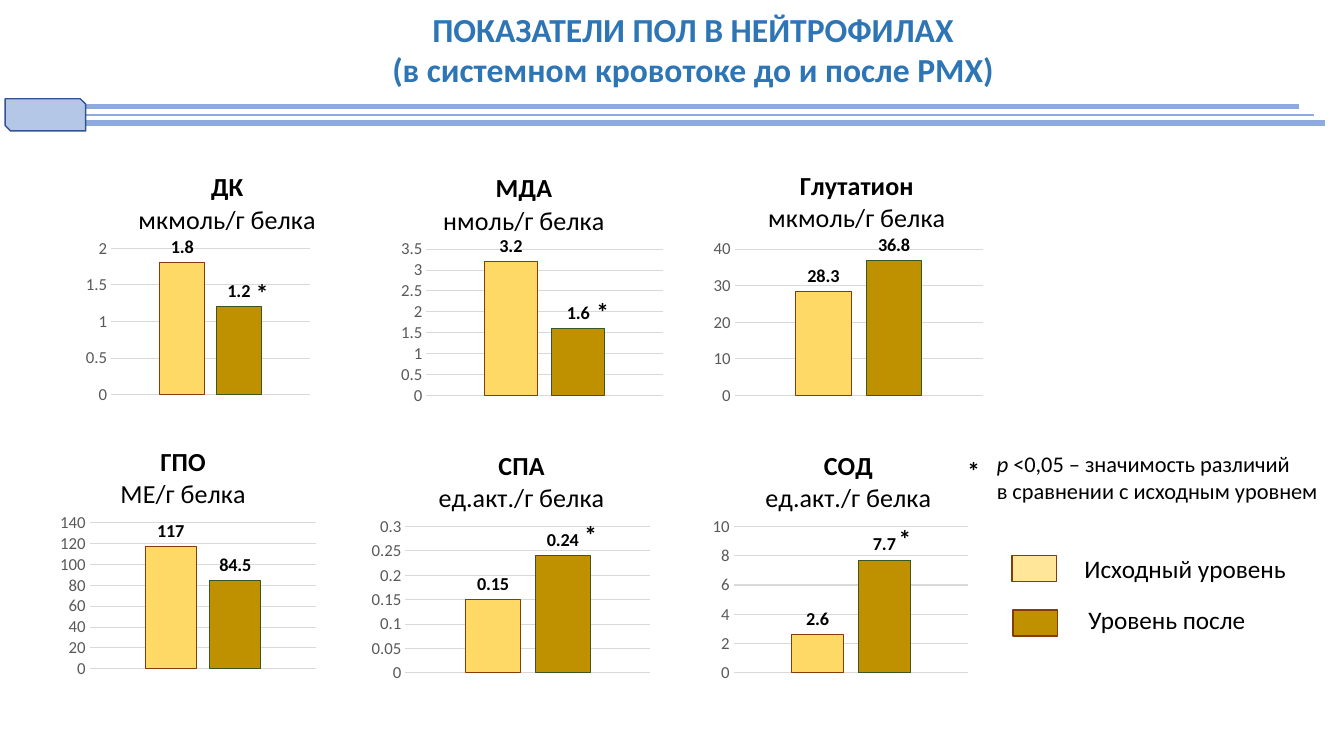
from lxml import etree
from pptx import Presentation
from pptx import util as u
from pptx.chart.data import CategoryChartData
from pptx.dml.color import RGBColor
from pptx.enum import chart as ch
from pptx.enum import shapes, text
from pptx.oxml.ns import qn

# indicator, unit, value before, value after, left, top, width (cm), title offset x, y (fractions)
INDICATORS = [
    ("ДК", "мкмоль/г белка", 1.8, 1.2, 1.6, 3.94, 6.48, 0.28, 0.04),
    ("МДА", "нмоль/г белка", 3.2, 1.6, 9.32, 3.96, 7.7, 0.23, 0.04),
    ("Глутатион", "мкмоль/г белка", 28.3, 36.8, 17.02, 3.96, 8.08, 0.28, 0.03),
    ("ГПО", "МЕ/г белка", 117, 84.5, 0.89, 10.85, 7.39, 0.28, 0.04),
    ("СПА", "ед.акт./г белка", 0.15, 0.24, 8.74, 10.95, 7.98, 0.28, 0.04),
    ("СОД", "ед.акт./г белка", 2.6, 7.7, 17.07, 10.95, 7.65, 0.28, 0.04),
]
CHART_HEIGHT = 6.48
PLOT_AREA = dict(x=0.185, y=0.358, w=0.774, h=0.569)
SERIES_STYLES = [("FFD966", "843C0B"), ("BF9000", "385723")]
LEGEND = [
    ("Исходный уровень", "FFE699", 25.5, 14, 27.08, 13.82, 5.64),
    ("Уровень после", "BF9000", 25.53, 15.37, 27.18, 15.11, 4.52),
]
STARS = [(6.2, 6.86), (14.48, 12.95), (22.4, 13.06), (24.13, 11.35), (14.78, 7.34)]
RULES = [(0.23, 32.74, 2.69, 3.75), (0.3, 33.12, 2.9, 2), (0.18, 33.38, 3.1, 3.75)]


def colour(value):
    return RGBColor.from_string(value)


def set_layout(parent, index, target=None, **fractions):
    """Place a chart title or plot area by fractions of the chart."""
    for old in parent.findall(qn("c:layout")):
        parent.remove(old)
    layout = etree.Element(qn("c:layout"))
    manual = etree.SubElement(layout, qn("c:manualLayout"))
    entries = {"layoutTarget": target} if target else {}
    entries.update(xMode="edge", yMode="edge", **fractions)
    for tag, value in entries.items():
        etree.SubElement(manual, qn("c:" + tag)).set("val", str(value))
    parent.insert(index, layout)


class SlideBuilder:
    font = "Calibri"
    black = "000000"

    def __init__(self, slide):
        self.slide = slide

    def style(self, font, size, value=black, bold=False):
        font.name, font.size, font.bold = self.font, u.Pt(size), bold
        font.color.rgb = colour(value)

    def title(self, wording, left, top, width, height):
        heading = self.slide.shapes.title
        heading.left, heading.top = u.Cm(left), u.Cm(top)
        heading.width, heading.height = u.Cm(width), u.Cm(height)
        frame = heading.text_frame
        frame.text = wording
        frame.auto_size = text.MSO_AUTO_SIZE.NONE
        frame.vertical_anchor = text.MSO_ANCHOR.TOP
        paragraph = frame.paragraphs[0]
        paragraph.alignment = text.PP_ALIGN.CENTER
        paragraph.space_before = u.Pt(6)
        for run in paragraph.runs:
            self.style(run.font, 24, "2E75B6", True)

    def label(self, wording, left, top, width, height=1.02, size=18, bold=False):
        box = self.slide.shapes.add_textbox(u.Cm(left), u.Cm(top), u.Cm(width), u.Cm(height))
        box.text_frame.word_wrap = False
        paragraph = box.text_frame.paragraphs[0]
        paragraph.text = wording
        for run in paragraph.runs:
            self.style(run.font, size, bold=bold)
        return paragraph

    def note(self, symbol, lines, left, top, width, height):
        paragraph = self.label(symbol, left, top, width, height, 16)
        paragraph.runs[0].font.italic = True
        for number, line in enumerate(lines):
            if number:
                paragraph.add_line_break()
            run = paragraph.add_run()
            run.text = line
            self.style(run.font, 16)

    def box(self, kind, left, top, width, height, fill, outline, group=None):
        parent = group or self.slide
        shape = parent.shapes.add_shape(kind, u.Cm(left), u.Cm(top), u.Cm(width), u.Cm(height))
        shape.shadow.inherit = False
        shape.fill.solid()
        shape.fill.fore_color.rgb = colour(fill)
        shape.line.color.rgb = colour(outline)
        shape.line.width = u.Pt(1)

    def rule(self, start, end, level, weight, group):
        line = group.shapes.add_connector(
            shapes.MSO_CONNECTOR.STRAIGHT, u.Cm(start), u.Cm(level), u.Cm(end), u.Cm(level))
        line.line.color.rgb = colour("8FAADC")
        line.line.width = u.Pt(weight)
        etree.SubElement(line._element.spPr, qn("a:effectLst"))

    def chart(self, name, unit, before, after, left, top, width, title_x, title_y):
        data = CategoryChartData()
        data.categories = ["1"]
        data.add_series("Series 1", [before])
        data.add_series("Series 2", [after])
        chart = self.slide.shapes.add_chart(
            ch.XL_CHART_TYPE.COLUMN_CLUSTERED, u.Cm(left), u.Cm(top),
            u.Cm(width), u.Cm(CHART_HEIGHT), data).chart
        self.style(chart.font, 10)
        chart.has_legend = False
        self.chart_title(chart, name, unit, title_x, title_y)
        set_layout(chart._chartSpace.chart.plotArea, 0, "inner", **PLOT_AREA)
        self.chart_axes(chart)
        plot = chart.plots[0]
        plot.vary_by_categories = False
        plot.gap_width, plot.overlap = 219, -27
        for series, (fill, outline) in zip(plot.series, SERIES_STYLES):
            series.format.fill.solid()
            series.format.fill.fore_color.rgb = colour(fill)
            series.format.line.color.rgb = colour(outline)
            series.format.line.width = u.Pt(0.75)
            labels = series.data_labels
            labels.show_value = True
            labels.position = ch.XL_LABEL_POSITION.OUTSIDE_END
            self.style(labels.font, 13, bold=True)

    def chart_title(self, chart, name, unit, x, y):
        chart.has_title = True
        frame = chart.chart_title.text_frame
        frame.text = f"{name}\n{unit}"
        for paragraph, bold in zip(frame.paragraphs, (True, False)):
            paragraph.alignment = text.PP_ALIGN.CENTER
            self.style(paragraph.runs[0].font, 18.6, bold=bold)
        set_layout(chart.chart_title._element, 1, x=x, y=y)

    def chart_axes(self, chart):
        chart.category_axis.visible = False
        axis = chart.value_axis
        axis.major_tick_mark = axis.minor_tick_mark = ch.XL_TICK_MARK.NONE
        axis.format.line.fill.background()
        self.style(axis.tick_labels.font, 12, "595959")
        grid = axis.major_gridlines.format.line
        grid.color.rgb = colour("D9D9D9")
        grid.width = u.Pt(0.75)


def main():
    deck = Presentation()
    deck.slide_width, deck.slide_height = u.Cm(33.87), u.Cm(19.05)
    slide = deck.slides.add_slide(deck.slide_layouts[5])
    builder = SlideBuilder(slide)
    builder.title("ПОКАЗАТЕЛИ ПОЛ В НЕЙТРОФИЛАХ\v(в системном кровотоке до и после РМХ)",
                  1.07, 0.1, 32.79, 3.56)
    for indicator in INDICATORS:
        builder.chart(*indicator)
    for wording, fill, left, top, label_left, label_top, label_width in LEGEND:
        builder.box(shapes.MSO_SHAPE.RECTANGLE, left, top, 1.12, 0.66, fill, "843C0B")
        builder.label(wording, label_left, label_top, label_width)
    for left, top in STARS:
        builder.label("*", left, top, 0.84, bold=True)
    builder.note("p", [" <0,05 – значимость различий", "в сравнении с исходным уровнем"],
                 24.87, 11.23, 8.81, 1.63)
    divider = slide.shapes.add_group_shape()
    for rule in RULES:
        builder.rule(*rule, divider)
    builder.box(shapes.MSO_SHAPE.SNIP_2_DIAG_RECTANGLE, 0.13, 2.49, 2.03, 0.81,
                "B4C7E7", "325491", divider)
    deck.save("out.pptx")


if __name__ == "__main__":
    main()
